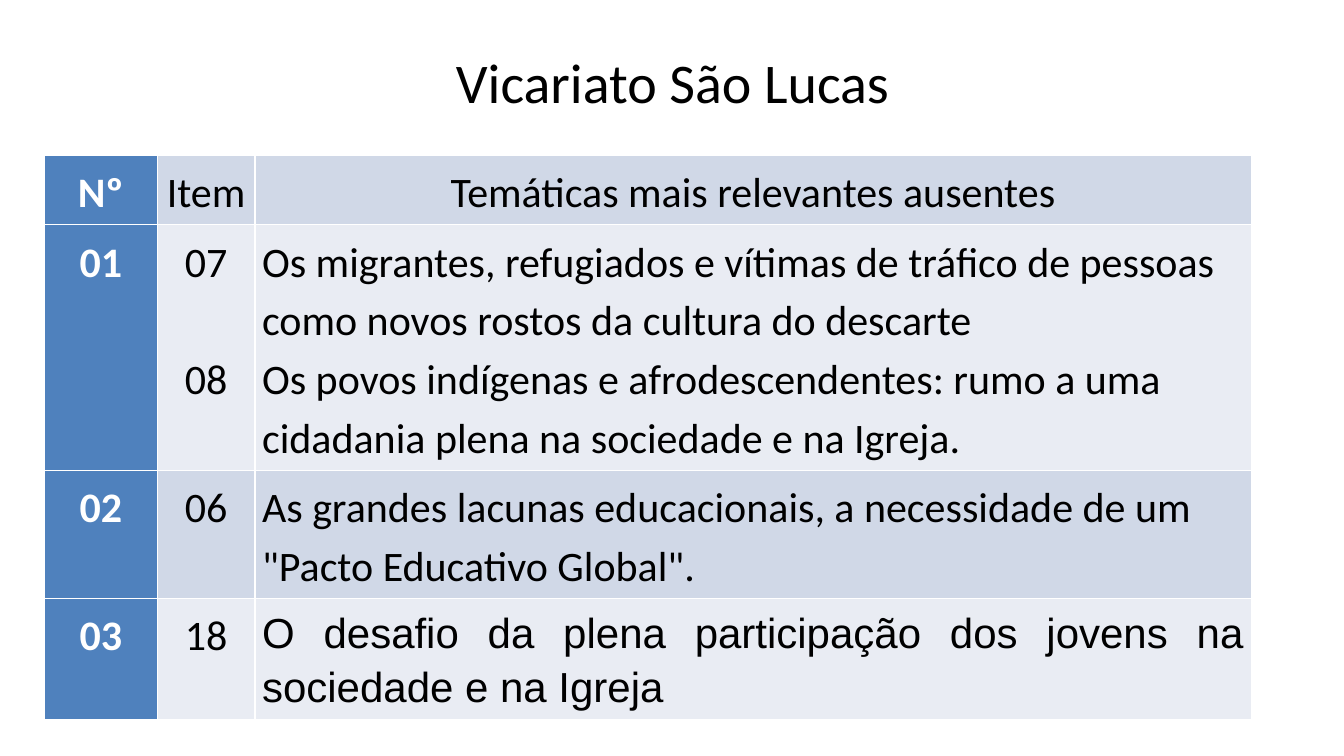
import pptx
import pptx.dml.color
import pptx.enum.text
import pptx.oxml
import pptx.oxml.ns
import pptx.util

Inches, Pt = pptx.util.Inches, pptx.util.Pt
RGBColor = pptx.dml.color.RGBColor
ALIGN = pptx.enum.text.PP_ALIGN

BLACK = RGBColor(0x00, 0x00, 0x00)
WHITE = RGBColor(0xFF, 0xFF, 0xFF)
BLUE = RGBColor(0x4F, 0x81, 0xBD)
DARK_BAND = RGBColor(0xD0, 0xD8, 0xE7)
LIGHT_BAND = RGBColor(0xE9, 0xEC, 0xF3)

TITLE = "Vicariato São Lucas"
# Each cell is a list of paragraphs.
ROWS = [
    (["Nº"], ["Item"], ["Temáticas mais relevantes ausentes"]),
    (["01"], ["07", "08"], [
        "Os migrantes, refugiados e vítimas de tráfico de pessoas como novos "
        "rostos da cultura do descarte",
        "Os povos indígenas e afrodescendentes: rumo a uma cidadania plena na "
        "sociedade e na Igreja.",
    ]),
    (["02"], ["06"], ["As grandes lacunas educacionais, a necessidade de um "
                      "\"Pacto Educativo Global\"."]),
    (["03"], ["18"], ["O desafio da plena participação dos jovens na sociedade "
                      "e na Igreja"]),
]
COLUMN_WIDTHS = [1.12, 0.97, 9.88]
ROW_HEIGHTS = [0.59, 2.4, 1.21, 1.21]
TABLE_LEFT, TABLE_TOP = 0.44, 1.54
ITEM_GAP = 42  # one text line, so that each item stands beside its topic


def write_text(frame, paragraphs, size=30, font="Calibri", color=BLACK,
               bold=False, align=ALIGN.CENTER, line_spacing=1.15, gap=0):
    for index, text in enumerate(paragraphs):
        paragraph = frame.paragraphs[0] if index == 0 else frame.add_paragraph()
        paragraph.alignment = align
        paragraph.line_spacing = line_spacing
        paragraph.space_before = Pt(gap if index else 0)
        run = paragraph.add_run()
        run.text = text
        run.font.size = Pt(size)
        run.font.name = font
        run.font.bold = bold
        run.font.color.rgb = color


def format_cell(cell, fill):
    cell.margin_left = cell.margin_right = Inches(0.07)
    cell.margin_top = cell.margin_bottom = Inches(0.05)
    properties = cell._tc.get_or_add_tcPr()
    for side in ("lnL", "lnR", "lnT", "lnB"):
        properties.append(pptx.oxml.parse_xml(
            f'<a:{side} {pptx.oxml.ns.nsdecls("a")} w="{Pt(0.96)}">'
            f'<a:solidFill><a:srgbClr val="{WHITE}"/></a:solidFill></a:{side}>'))
    cell.fill.solid()
    cell.fill.fore_color.rgb = fill


def add_topics_table(slide):
    table = slide.shapes.add_table(
        len(ROWS), len(COLUMN_WIDTHS), Inches(TABLE_LEFT), Inches(TABLE_TOP),
        Inches(sum(COLUMN_WIDTHS)), Inches(sum(ROW_HEIGHTS))).table
    table.first_row = table.horz_banding = False
    for column, width in zip(table.columns, COLUMN_WIDTHS):
        column.width = Inches(width)
    for row, height in zip(table.rows, ROW_HEIGHTS):
        row.height = Inches(height)

    last_row = len(ROWS) - 1
    for row_index, row in enumerate(ROWS):
        band = LIGHT_BAND if row_index % 2 else DARK_BAND
        for column_index, paragraphs in enumerate(row):
            cell = table.cell(row_index, column_index)
            is_number = column_index == 0
            is_topic = column_index == 2 and row_index > 0
            is_last_topic = is_topic and row_index == last_row
            align = ALIGN.LEFT if is_topic else ALIGN.CENTER
            format_cell(cell, BLUE if is_number else band)
            write_text(cell.text_frame, paragraphs,
                       font="Arial" if is_last_topic else "Calibri",
                       color=WHITE if is_number else BLACK, bold=is_number,
                       align=ALIGN.JUSTIFY if is_last_topic else align,
                       gap=ITEM_GAP if column_index == 1 else 0)


def main():
    presentation = pptx.Presentation()
    presentation.slide_width = Inches(13.33)
    presentation.slide_height = Inches(7.5)
    slide = presentation.slides.add_slide(presentation.slide_layouts[5])

    title = slide.shapes.title
    title.left, title.top = Inches(0.67), Inches(0.3)
    title.width, title.height = Inches(12), Inches(1.01)
    title.text_frame.vertical_anchor = pptx.enum.text.MSO_ANCHOR.MIDDLE
    write_text(title.text_frame, [TITLE], size=40, line_spacing=1.0)

    add_topics_table(slide)
    presentation.save("out.pptx")


if __name__ == "__main__":
    main()
